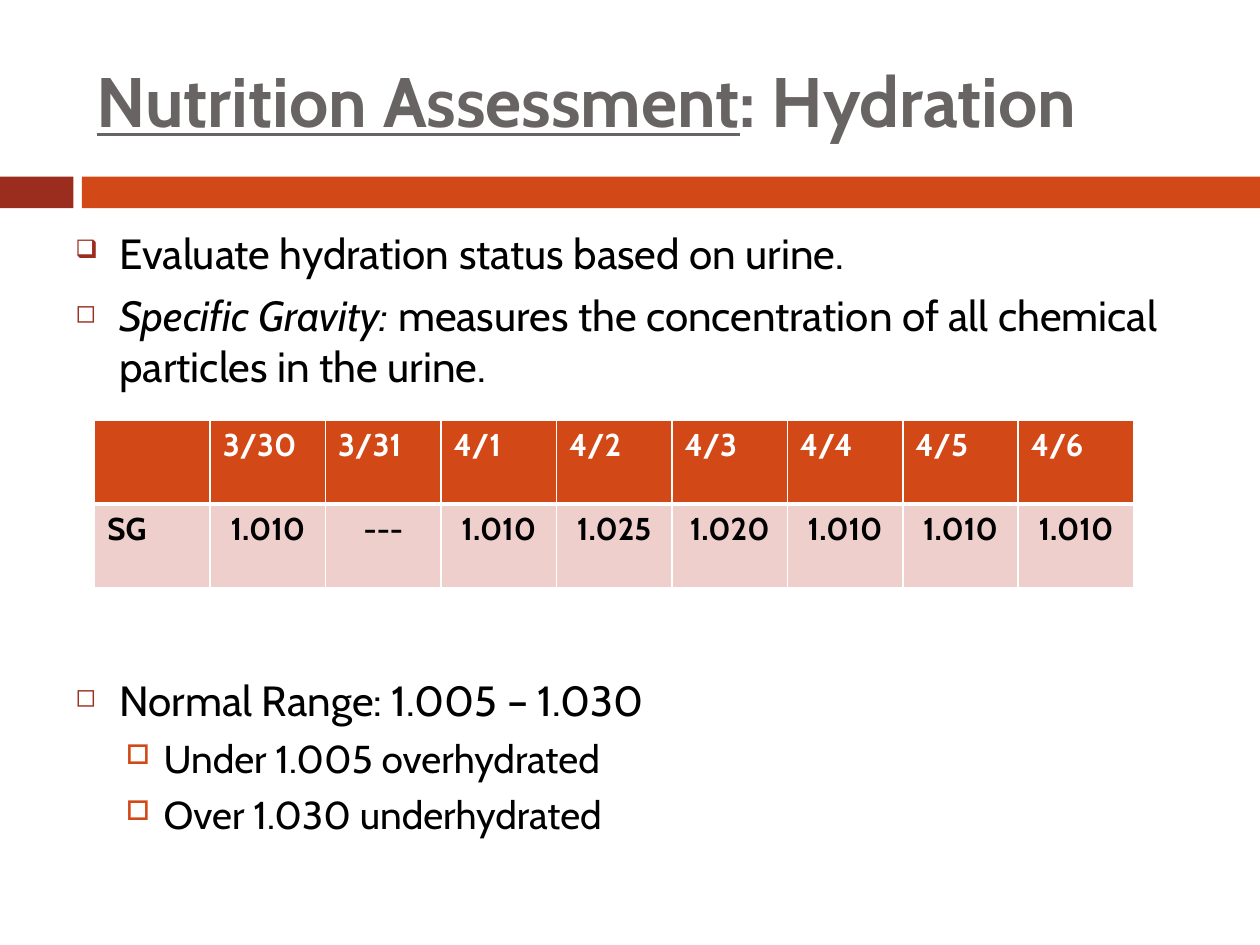
from dataclasses import dataclass

from lxml import etree
from pptx import Presentation
from pptx.dml.color import RGBColor
from pptx.enum.shapes import MSO_SHAPE
from pptx.enum.text import MSO_ANCHOR, PP_ALIGN
from pptx.oxml.ns import qn
from pptx.util import Cm, Pt

RECTANGLE = MSO_SHAPE.RECTANGLE
TOP, MIDDLE = MSO_ANCHOR.TOP, MSO_ANCHOR.MIDDLE
LEFT, CENTER = PP_ALIGN.LEFT, PP_ALIGN.CENTER


@dataclass(frozen=True)
class Theme:
    """Colours and type sizes of the slide."""
    font: str = "Cabin"
    title: str = "696464"
    text: str = "000000"
    white: str = "FFFFFF"
    dark: str = "9B2D1F"
    accent: str = "D34817"
    pale: str = "EFCFCC"
    title_size: float = 40
    body_size: float = 24.1
    detail_size: float = 22.2
    table_size: float = 18


def add_run(paragraph, text, *, font, size, color, bold=False, italic=False, underline=False):
    """Append formatted text to a paragraph."""
    run = paragraph.add_run()
    run.text = text
    run.font.name = font
    run.font.size = Pt(size)
    run.font.color.rgb = RGBColor.from_string(color)
    run.font.bold, run.font.italic, run.font.underline = bold, italic, underline


def add_bullet(paragraph, character, *, color, percent, margin, indent):
    """Give a paragraph a coloured bullet and a hanging indent."""
    properties = paragraph._p.get_or_add_pPr()
    properties.set("marL", str(Cm(margin)))
    properties.set("indent", str(Cm(-indent)))
    bullet_color = etree.SubElement(properties, qn("a:buClr"))
    etree.SubElement(bullet_color, qn("a:srgbClr"), val=color)
    etree.SubElement(properties, qn("a:buSzPct"), val=str(percent * 1000))
    etree.SubElement(properties, qn("a:buChar"), char=character)


def add_borders(cell, color, **widths):
    """Draw cell borders, with widths in points by side."""
    properties = cell._tc.get_or_add_tcPr()
    for side, width in widths.items():
        line = etree.SubElement(properties, qn(f"a:ln{side}"), w=str(Pt(width)))
        fill = etree.SubElement(line, qn("a:solidFill"))
        etree.SubElement(fill, qn("a:srgbClr"), val=color)


class SlideBuilder:
    """Draws themed elements on one slide."""

    def __init__(self, slide, theme):
        """Keep the slide and its theme."""
        self.slide = slide
        self.theme = theme

    def bar(self, left, top, width, height, color):
        """Add a plain filled rectangle."""
        shape = self.slide.shapes.add_shape(RECTANGLE, Cm(left), Cm(top), Cm(width), Cm(height))
        shape.shadow.inherit = False
        shape.fill.solid()
        shape.fill.fore_color.rgb = RGBColor.from_string(color)
        shape.line.fill.background()

    def text_frame(self, left, top, width, height, anchor=TOP):
        """Add a wrapping text box and return its frame."""
        box = self.slide.shapes.add_textbox(Cm(left), Cm(top), Cm(width), Cm(height))
        box.text_frame.word_wrap = True
        box.text_frame.vertical_anchor = anchor
        return box.text_frame

    def title(self, underlined, rest):
        """Add the title with its underlined opening."""
        frame = self.text_frame(1.7, 0.64, 22.66, 2.74, MIDDLE)
        for text, underline in ((underlined, True), (rest, False)):
            add_run(frame.paragraphs[0], text, font=self.theme.font, size=self.theme.title_size,
                    color=self.theme.title, bold=True, underline=underline)

    def bullets(self, items):
        """Add the bulleted body from level, bullet, space and runs."""
        theme = self.theme
        levels = (
            (theme.body_size, dict(color=theme.dark, percent=60, margin=0.89, indent=0.89)),
            (theme.detail_size, dict(color=theme.accent, percent=70, margin=1.78, indent=0.76)),
        )
        frame = self.text_frame(1.27, 4.45, 23.5, 12.5)
        for index, (level, character, space, runs) in enumerate(items):
            paragraph = frame.add_paragraph() if index else frame.paragraphs[0]
            size, bullet_format = levels[level]
            paragraph.level = level
            paragraph.space_before = Pt(space)
            add_bullet(paragraph, character, **bullet_format)
            for text, italic in runs:
                add_run(paragraph, text, font=theme.font, size=size, color=theme.text, italic=italic)

    def table(self, rows, left, top, width, height):
        """Add a table with a dark header row and pale values."""
        theme = self.theme
        frame = self.slide.shapes.add_table(
            len(rows), len(rows[0]), Cm(left), Cm(top), Cm(width), Cm(height))
        styles = (
            (theme.accent, theme.white, dict(L=1, R=1, T=1, B=3)),
            (theme.pale, theme.text, dict(L=1, R=1, T=3, B=1)),
        )
        for row_index, (values, (fill, color, borders)) in enumerate(zip(rows, styles)):
            for column_index, value in enumerate(values):
                cell = frame.table.cell(row_index, column_index)
                add_borders(cell, theme.white, **borders)
                cell.fill.solid()
                cell.fill.fore_color.rgb = RGBColor.from_string(fill)
                paragraph = cell.text_frame.paragraphs[0]
                paragraph.alignment = CENTER if row_index and column_index else LEFT
                if value:
                    add_run(paragraph, value, font=theme.font, size=theme.table_size,
                            color=color, bold=True)


def main():
    """Build and save the hydration slide."""
    presentation = Presentation()
    presentation.slide_width, presentation.slide_height = Cm(25.4), Cm(19.05)
    theme = Theme()
    builder = SlideBuilder(presentation.slides.add_slide(presentation.slide_layouts[6]), theme)
    builder.bar(0, 3.56, 1.48, 0.64, theme.dark)
    builder.bar(1.65, 3.56, 23.75, 0.64, theme.accent)
    builder.title("Nutrition Assessment", ": Hydration")
    builder.bullets([
        (0, "❑", 7, [("Evaluate hydration status based on urine.", False)]),
        (0, "◻", 7, [
            ("Specific Gravity: ", True),
            ("measures the concentration of all chemical particles in the urine.", False),
        ]),
        (0, "◻", 162, [("Normal Range: 1.005 – 1.030", False)]),
        (1, "□", 5.5, [("Under 1.005 overhydrated", False)]),
        (1, "□", 5.5, [("Over 1.030 underhydrated", False)]),
    ])
    builder.table([
        ["", "3/30", "3/31", "4/1", "4/2", "4/3", "4/4", "4/5", "4/6"],
        ["SG", "1.010", "---", "1.010", "1.025", "1.020", "1.010", "1.010", "1.010"],
    ], 1.91, 8.47, 20.95, 3.38)
    presentation.save("out.pptx")


if __name__ == "__main__":
    main()
